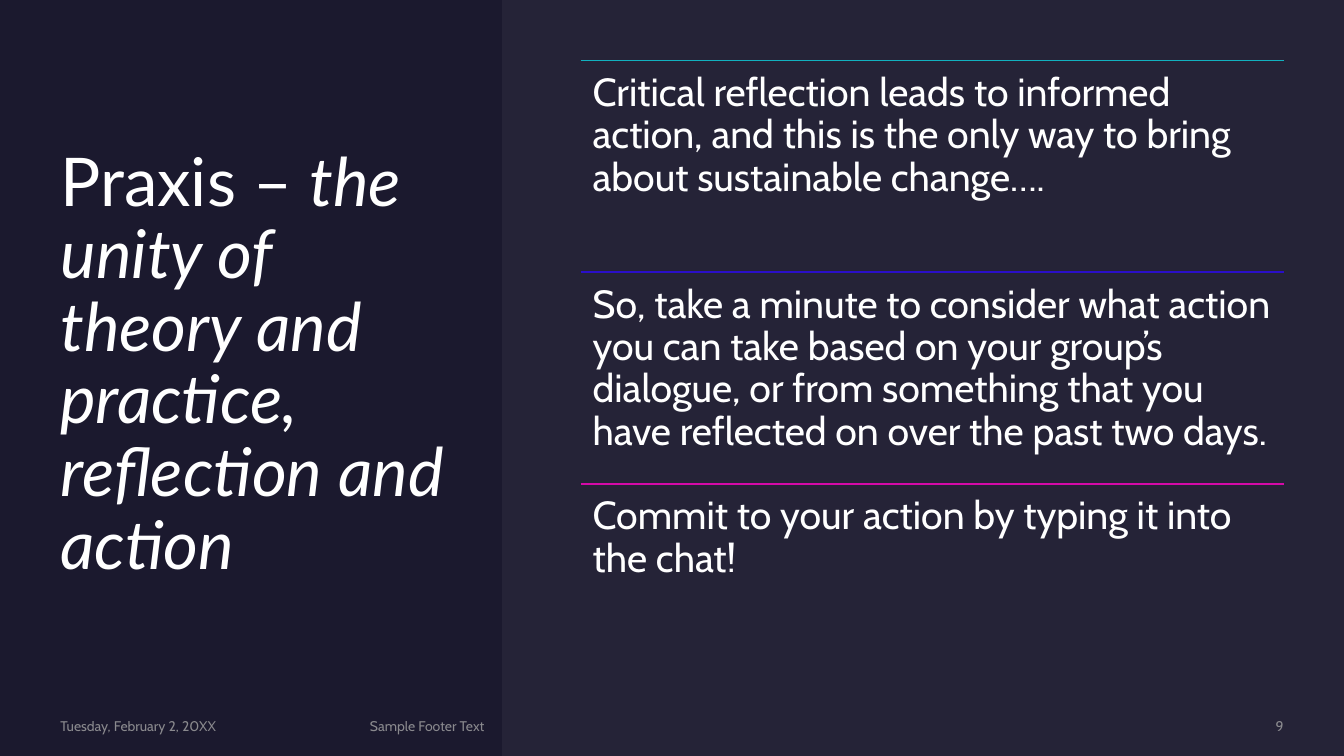
from dataclasses import dataclass

from lxml import etree
from pptx import Presentation
from pptx import util as u
from pptx.dml.color import RGBColor
from pptx.enum import shapes, text
from pptx.oxml.ns import qn


@dataclass(frozen=True)
class Theme:
    night: str = "1B192E"
    veil: str = "E4E3F0"
    white: str = "FFFFFF"
    grey: str = "A6A6A6"
    accents: tuple = ("12B1BF", "2A0EC9", "D40AA8")
    title_font: str = "Lato"
    body_font: str = "Cabin"
    title_size: int = 48
    body_size: int = 28
    footer_size: int = 10
    veil_alpha: int = 5
    footer_alpha: int = 80


def set_alpha(element, percent):
    for color in element.iter(qn("a:srgbClr")):
        etree.SubElement(color, qn("a:alpha")).set("val", str(percent * 1000))


class SlideBuilder:
    """Places elements on a grid of 100 columns by 100 rows."""

    def __init__(self, presentation, theme):
        self.theme = theme
        self.column = presentation.slide_width / 100
        self.row = presentation.slide_height / 100
        self.slide = presentation.slides.add_slide(presentation.slide_layouts[6])

    def box(self, left, top, width, height):
        return (round(left * self.column), round(top * self.row),
                round(width * self.column), round(height * self.row))

    def background(self, color):
        fill = self.slide.background.fill
        fill.solid()
        fill.fore_color.rgb = RGBColor.from_string(color)

    def panel(self, area, color, alpha=100):
        shape = self.slide.shapes.add_shape(
            shapes.MSO_SHAPE.RECTANGLE, *self.box(*area))
        shape.shadow.inherit = False
        shape.fill.solid()
        shape.fill.fore_color.rgb = RGBColor.from_string(color)
        shape.line.fill.background()
        if alpha < 100:
            set_alpha(shape._element.spPr, alpha)

    def rule(self, parent, left, top, width, color):
        x, y, length, _ = self.box(left, top, width, 0)
        connector = parent.shapes.add_connector(
            shapes.MSO_CONNECTOR.STRAIGHT, x, y, x + length, y)
        connector.line.color.rgb = RGBColor.from_string(color)
        connector.line.width = u.Pt(1)
        etree.SubElement(connector._element.spPr, qn("a:effectLst"))

    def text(self, parent, area, runs, font, color, inset=0, alpha=100,
             anchor=text.MSO_ANCHOR.MIDDLE, **paragraph_format):
        shape = parent.shapes.add_textbox(*self.box(*area))
        frame = shape.text_frame
        frame_format = {"word_wrap": True, "vertical_anchor": anchor}
        for side in ("left", "top", "right", "bottom"):
            frame_format[f"margin_{side}"] = u.Inches(inset)
        for name, value in frame_format.items():
            setattr(frame, name, value)
        paragraph = frame.paragraphs[0]
        for name, value in paragraph_format.items():
            setattr(paragraph, name, value)
        for wording, extra in runs:
            run = paragraph.add_run()
            run.text = wording
            for name, value in {**font, **extra}.items():
                setattr(run.font, name, value)
            run.font.color.rgb = RGBColor.from_string(color)
            if alpha < 100:
                set_alpha(run._r, alpha)


def main():
    presentation = Presentation()
    presentation.slide_width = u.Inches(13.33)
    presentation.slide_height = u.Inches(7.5)
    theme = Theme()
    builder = SlideBuilder(presentation, theme)
    slide = builder.slide

    # Dark backdrop, with the title on the left
    builder.background(theme.night)
    builder.panel((0, 0, 100, 100), theme.night)
    title_font = {"name": theme.title_font, "size": u.Pt(theme.title_size)}
    builder.text(
        slide, (4.5, 8, 29.25, 80.8),
        [("Praxis – ", {}),
         ("the unity of theory and practice, reflection and action",
          {"italic": True})],
        title_font, theme.white, line_spacing=0.9)

    # Lighter panel on the right
    builder.panel((37.36, 0, 62.64, 100), theme.veil, theme.veil_alpha)

    # Footer
    footer_font = {"name": theme.body_font, "size": u.Pt(theme.footer_size)}
    left, right = text.PP_ALIGN.LEFT, text.PP_ALIGN.RIGHT
    footers = [
        (4.5, 21.6, "Tuesday, February 2, 20XX", left),
        (27.53, 52.36, "Sample Footer Text", left),
        (81.62, 13.88, "9", right),
    ]
    for column, width, wording, alignment in footers:
        builder.text(slide, (column, 94.93, width, 2.27), [(wording, {})],
                     footer_font, theme.grey, alpha=theme.footer_alpha,
                     alignment=alignment, space_after=u.Pt(6))

    # Three messages, each under its coloured rule
    messages = [
        "Critical reflection leads to informed action, and this is the only "
        "way to bring about sustainable change….",
        "So, take a minute to consider what action you can take based on your "
        "group’s dialogue, or from something that you have reflected on over "
        "the past two days.",
        "Commit to your action by typing it into the chat!",
    ]
    body_font = {"name": theme.body_font, "size": u.Pt(theme.body_size)}
    column, first_row, width, height = 43.2, 8, 52.3, 28
    group = slide.shapes.add_group_shape()
    for index, (message, accent) in enumerate(zip(messages, theme.accents)):
        row = first_row + index * height
        builder.rule(group, column, row, width, accent)
        builder.text(group, (column, row, width, height), [(message, {})],
                     body_font, theme.white, inset=0.12,
                     anchor=text.MSO_ANCHOR.TOP, line_spacing=0.9)

    presentation.save("out.pptx")


if __name__ == "__main__":
    main()
